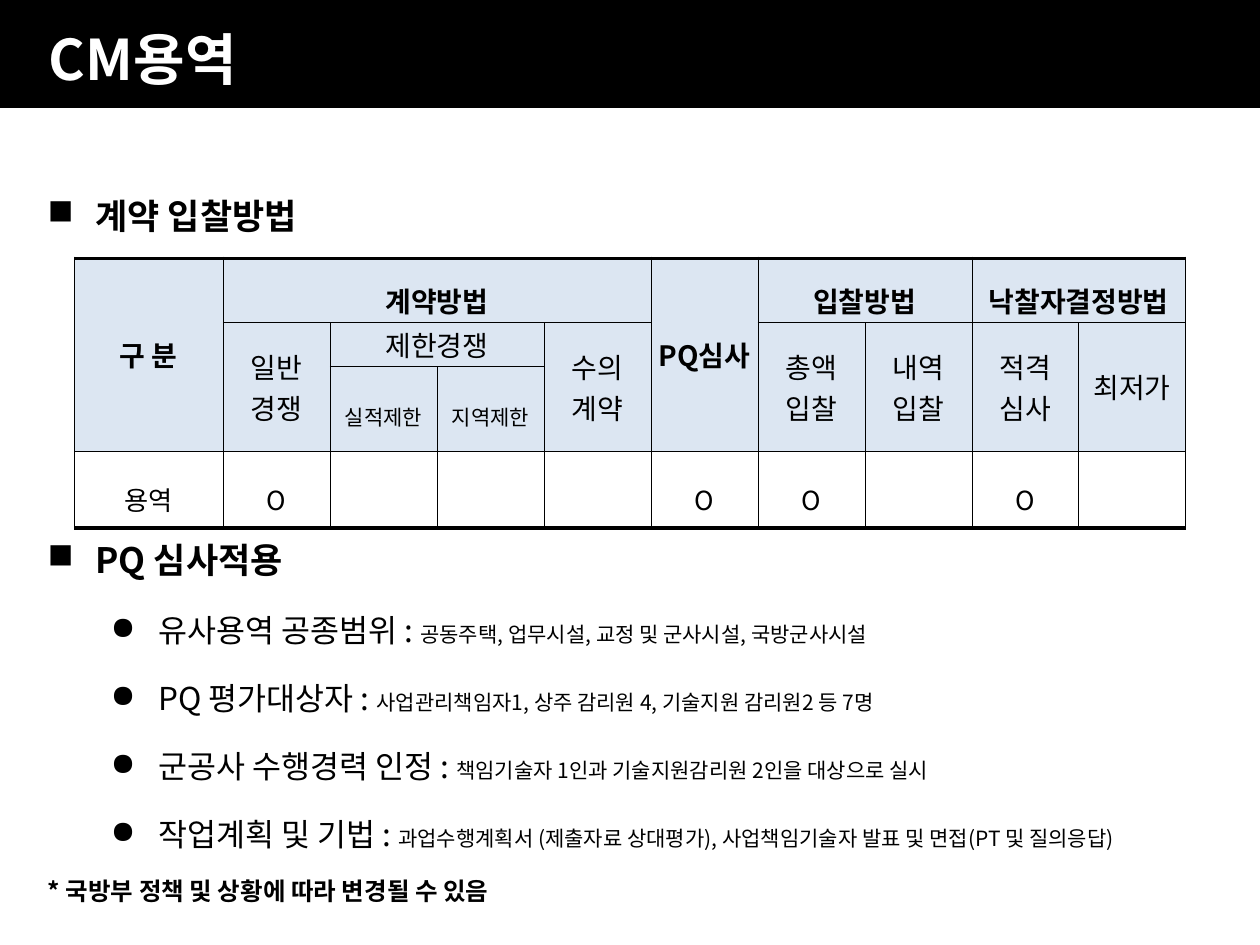
from lxml import etree
from pptx import Presentation, util as u
from pptx.dml.color import RGBColor
from pptx.enum import shapes, text
from pptx.oxml import ns

BLACK = RGBColor(0x00, 0x00, 0x00)
WHITE = RGBColor(0xFF, 0xFF, 0xFF)
PALE_BLUE = RGBColor(0xDC, 0xE6, 0xF2)
FONT = "Noto Sans CJK KR"
WIDTH, HEIGHT = 10, 7.5
TABLE_LEFT, TABLE_TOP, TABLE_WIDTH = 0.59, 2.05, 8.82
LABEL_WIDTH = 1.18
ROW_HEIGHTS = (0.51, 0.35, 0.67, 0.61)
COLUMN_COUNT = 10
THIN, THICK = 0.25, 2.25
BODY_LEFT, BODY_WIDTH = 0.28, 9.45

HEADING = dict(size=u.Pt(20), bold=True)
TOPIC = dict(size=u.Pt(18), bold=False)
DETAIL = dict(size=u.Pt(12), bold=False)
NOTE = dict(size=u.Pt(14), bold=True)
TITLE = dict(size=u.Pt(32), bold=True)
GROUP = dict(size=u.Pt(16), bold=True)
METHOD = dict(size=u.Pt(16), bold=False)
LIMIT = dict(size=u.Pt(12), bold=False)
RESULT = dict(size=u.Pt(15), bold=False)

HEADER_CELLS = [
    (0, 0, 3, 1, ["구 분"], GROUP, 1),
    (0, 1, 1, 4, ["계약방법"], GROUP, 1.5),
    (0, 5, 3, 1, ["PQ심사"], GROUP, 1),
    (0, 6, 1, 2, ["입찰방법"], GROUP, 1.5),
    (0, 8, 1, 2, ["낙찰자결정방법"], GROUP, 1.5),
    (1, 1, 2, 1, ["일반", "경쟁"], METHOD, 1),
    (1, 2, 1, 2, ["제한경쟁"], METHOD, 1),
    (1, 4, 2, 1, ["수의", "계약"], METHOD, 1),
    (1, 6, 2, 1, ["총액", "입찰"], METHOD, 1),
    (1, 7, 2, 1, ["내역", "입찰"], METHOD, 1),
    (1, 8, 2, 1, ["적격", "심사"], METHOD, 1),
    (1, 9, 2, 1, ["최저가"], METHOD, 1),
    (2, 2, 1, 1, ["실적제한"], LIMIT, 1.5),
    (2, 3, 1, 1, ["지역제한"], LIMIT, 1.5),
]
RESULTS = ["용역", "O", "", "", "", "O", "O", "", "O", ""]

CRITERIA = [
    ("유사용역 공종범위 : ", "공동주택, 업무시설, 교정 및 군사시설, 국방군사시설"),
    ("PQ 평가대상자 : ", "사업관리책임자1, 상주 감리원 4, 기술지원 감리원2 등 7명"),
    ("군공사 수행경력 인정 : ", "책임기술자 1인과 기술지원감리원 2인을 대상으로 실시"),
    ("작업계획 및 기법 : ",
     "과업수행계획서 (제출자료 상대평가), 사업책임기술자 발표 및 면접(PT 및 질의응답)"),
]


def add_span(para, words, style, color=BLACK):
    """Add a run with the given format values, for Latin and Korean text."""
    span = para.add_run()
    span.text = words
    for name, value in style.items():
        setattr(span.font, name, value)
    span.font.color.rgb = color
    span.font.name = FONT
    etree.SubElement(span.font._element, ns.qn("a:ea"), typeface=FONT)


def next_para(frame):
    """Return the unused first paragraph of a frame, or a new one."""
    first = frame.paragraphs[0]
    return frame.add_paragraph() if first.runs else first


def add_line(frame, spans, margin=0, hang=0, bullet=None, spacing=1.8):
    """Add a body paragraph made of (words, style) spans."""
    para = next_para(frame)
    props = para._p.get_or_add_pPr()
    props.set("marL", str(u.Inches(margin)))
    props.set("indent", str(-u.Inches(hang)))
    if bullet:
        etree.SubElement(props, ns.qn("a:buChar"), char=bullet)
    para.line_spacing = spacing
    for words, style in spans:
        add_span(para, words, style)


def add_box(page, left, top, width, height):
    """Add a wrapping text box and return its text frame."""
    box = page.shapes.add_textbox(*map(u.Inches, (left, top, width, height)))
    box.text_frame.word_wrap = True
    return box.text_frame


def add_title(page):
    """Draw the black band with the slide title."""
    bar = page.shapes.add_shape(
        shapes.MSO_SHAPE.RECTANGLE, 0, 0, u.Inches(WIDTH), u.Inches(0.84))
    bar.shadow.inherit = False
    bar.fill.solid()
    bar.fill.fore_color.rgb = BLACK
    bar.line.color.rgb = BLACK
    bar.line.width = u.Pt(2)
    frame = add_box(page, 0, 0, WIDTH, 0.92)
    frame.vertical_anchor = text.MSO_ANCHOR.MIDDLE
    para = frame.paragraphs[0]
    para._p.get_or_add_pPr().set("marL", str(u.Inches(0.29)))
    add_span(para, "CM용역", TITLE, WHITE)


def set_borders(cell, top, bottom):
    """Give a cell black borders, thin at the sides."""
    props = cell._tc.get_or_add_tcPr()
    for side, width in (("L", THIN), ("R", THIN), ("T", top), ("B", bottom)):
        line = etree.SubElement(
            props, ns.qn(f"a:ln{side}"), w=str(u.Pt(width)))
        fill = etree.SubElement(line, ns.qn("a:solidFill"))
        etree.SubElement(fill, ns.qn("a:srgbClr"), val=str(BLACK))


def fill_cell(cell, lines, style, spacing):
    """Write centred lines into a table cell."""
    for words in lines:
        para = next_para(cell.text_frame)
        para.alignment = text.PP_ALIGN.CENTER
        para.line_spacing = spacing
        add_span(para, words, style)


def add_methods_table(page):
    """Add the table of contract and bidding methods."""
    row_count = len(ROW_HEIGHTS)
    table = page.shapes.add_table(
        row_count, COLUMN_COUNT, u.Inches(TABLE_LEFT), u.Inches(TABLE_TOP),
        u.Inches(TABLE_WIDTH), u.Inches(sum(ROW_HEIGHTS))).table
    table.first_row = table.horz_banding = False
    method_width = (TABLE_WIDTH - LABEL_WIDTH) / (COLUMN_COUNT - 1)
    for index, column in enumerate(table.columns):
        column.width = u.Inches(method_width if index else LABEL_WIDTH)
    layout = dict(
        margin_left=u.Inches(0.05), margin_right=u.Inches(0.05),
        margin_top=u.Inches(0.01), margin_bottom=u.Inches(0.01),
        vertical_anchor=text.MSO_ANCHOR.MIDDLE)
    last = row_count - 1
    for index, row in enumerate(table.rows):
        row.height = u.Inches(ROW_HEIGHTS[index])
        for cell in row.cells:
            for name, value in layout.items():
                setattr(cell, name, value)
            set_borders(cell, THIN if index else THICK,
                        THICK if index == last else THIN)
            if index == last:
                cell.fill.background()
            else:
                cell.fill.solid()
                cell.fill.fore_color.rgb = PALE_BLUE
    for row, column, rows, columns, lines, style, spacing in HEADER_CELLS:
        cell = table.cell(row, column)
        if rows * columns > 1:
            cell.merge(table.cell(row + rows - 1, column + columns - 1))
        fill_cell(cell, lines, style, spacing)
    for column, words in enumerate(RESULTS):
        if words:
            fill_cell(table.cell(last, column), [words], RESULT, 1.5)


def add_section(page, top, height, heading):
    """Add a body box that starts with a square-bulleted heading."""
    frame = add_box(page, BODY_LEFT, top, BODY_WIDTH, height)
    add_line(frame, [(heading, HEADING)], 0.38, 0.38, "■")
    return frame


def main():
    """Build the slide and save it."""
    deck = Presentation()
    deck.slide_width, deck.slide_height = u.Inches(WIDTH), u.Inches(HEIGHT)
    page = deck.slides.add_slide(deck.slide_layouts[6])
    add_title(page)
    add_section(page, 1.23, 0.8, "계약 입찰방법")
    frame = add_section(page, 3.96, 3.3, "PQ 심사적용")
    for topic, detail in CRITERIA:
        add_line(frame, [(topic, TOPIC), (detail, DETAIL)], 0.88, 0.38, "●")
    add_line(frame, [("* 국방부 정책 및 상황에 따라 변경될 수 있음", NOTE)])
    add_methods_table(page)
    deck.save("out.pptx")


if __name__ == "__main__":
    main()
